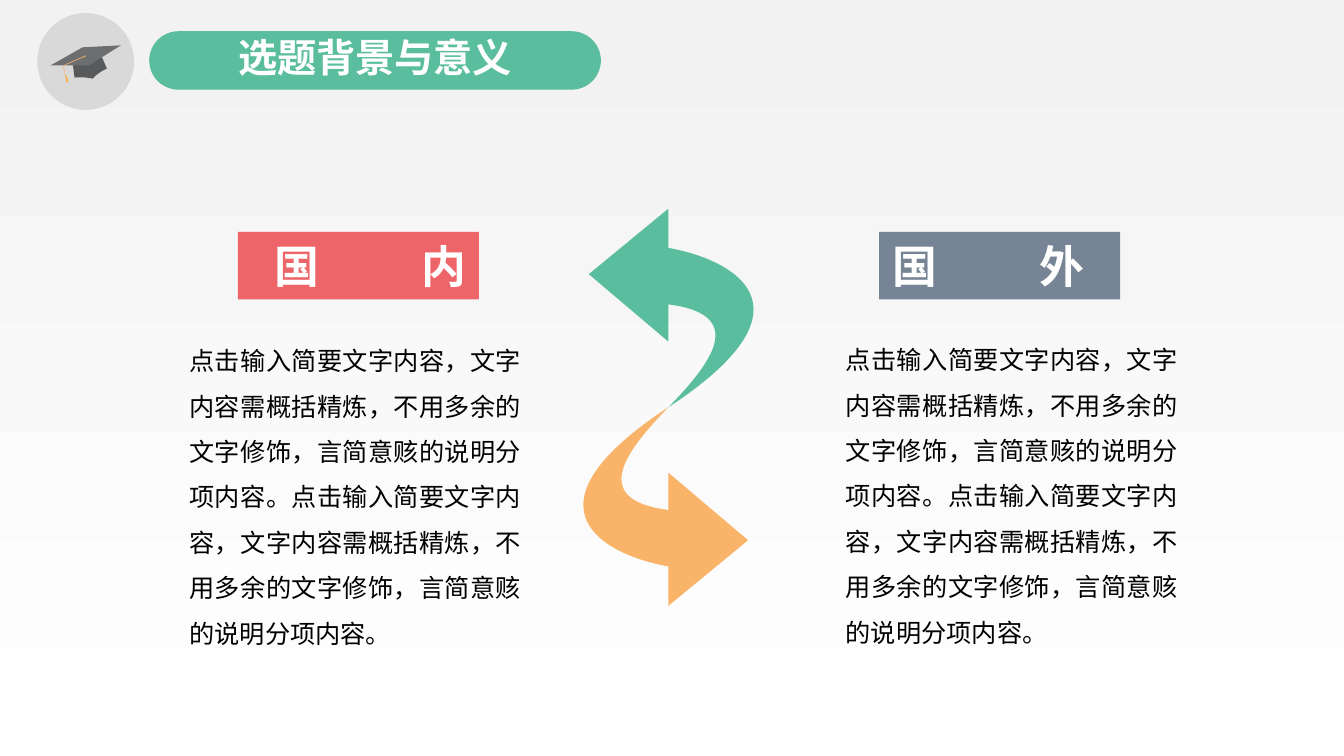
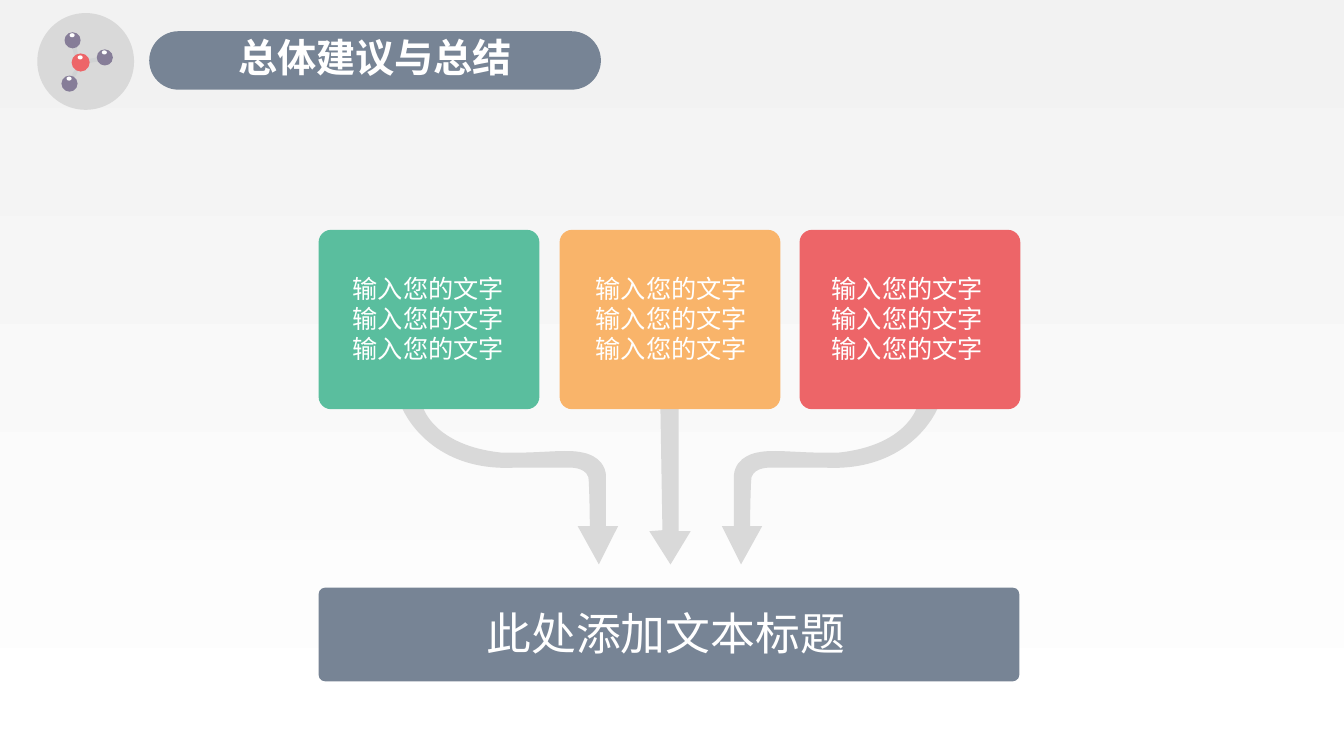
from lxml.etree import SubElement
from pptx import Presentation
from pptx.dml.color import RGBColor
from pptx.enum.shapes import MSO_SHAPE as Shape
from pptx.enum.text import MSO_ANCHOR as Anchor, PP_ALIGN as Align
from pptx.oxml.ns import qn
from pptx.util import Inches, Pt

GREEN, ORANGE, RED, SLATE = "5ABE9E", "F9B46A", "ED6568", "778495"
GREY, STICK, PURPLE, WHITE, BLACK = "D9D9D9", "D0D2D3", "867D98", "FFFFFF", "000000"
BACKGROUND = ("F2F2F2", "FFFFFF")
CJK = "Noto Sans CJK SC"

SENTENCE = "点击输入简要文字内容，文字内容需概括精炼，不用多余的文字修饰，言简意赅的说明分项内容。"
# label, fill, label left, label inset, body left, body top
REGIONS = [
    ("国\t内", RED, 2.36, 0.36, 1.78, 3.23),
    ("国\t外", SLATE, 8.72, 0.13, 8.29, 3.22),
]
CARD_LINES = ["输入您的文字"] * 3
# fill, card left, text left
CARDS = [(GREEN, 3.16, 3.4), (ORANGE, 5.55, 5.81), (RED, 7.93, 8.15)]
SUMMARY = "此处添加文本标题"

# Outlines: pairs are line ends, sextuples are Bézier curves
CURVED_ARROW = [
    (6.63, 2.46), (6.63, 2.07), (5.84, 2.72), (6.63, 3.39), (6.63, 3.02),
    (7.41, 3.12, 7.07, 3.59, 6.63, 4.04), (8.17, 3.03, 7.25, 2.57, 6.63, 2.46),
]
BENT_ARROW = [
    (3.99, 4.05), (3.99, 4.05, 4.24, 4.68, 5.1, 4.64), (5.67, 4.64),
    (5.67, 4.64, 5.85, 4.64, 5.84, 4.78), (5.85, 5, 5.85, 5.22, 5.85, 5.22),
    (5.73, 5.22), (5.94, 5.6), (6.13, 5.22), (6.01, 5.22),
    (6.01, 5.22, 6.01, 4.97, 6.01, 4.71), (5.99, 4.52, 5.78, 4.49, 5.78, 4.49),
    (5.61, 4.45, 5.37, 4.5, 4.97, 4.49), (4.31, 4.42, 4.2, 4.05, 4.2, 4.05),
]
STRAIGHT_ARROW = [
    (6.55, 4.05), (6.57, 5.26), (6.44, 5.27), (6.65, 5.6),
    (6.85, 5.27), (6.73, 5.27), (6.73, 4.05),
]
CAP = [
    ("58595B", [(1, 0.54), (0.72, 0.62), (0.74, 0.77),
                (0.74, 0.77, 0.84, 0.76, 0.92, 0.78),
                (0.97, 0.72, 1.06, 0.68, 1.06, 0.68)]),
    ("6D6E70", [(0.82, 0.47), (0.5, 0.65), (0.88, 0.65), (1.2, 0.45)]),
    (ORANGE, [(0.66, 0.77), (0.65, 0.77), (0.65, 0.75, 0.62, 0.66, 0.63, 0.65),
              (0.64, 0.64, 0.81, 0.57, 0.85, 0.55), (0.85, 0.56),
              (0.77, 0.59, 0.64, 0.65, 0.64, 0.65),
              (0.63, 0.66, 0.64, 0.72, 0.66, 0.77)]),
    ("FAAF40", [(0.65, 0.75), (0.66, 0.75), (0.68, 0.81), (0.66, 0.82)]),
]
STICKS = [
    [(1.03, 0.6), (0.86, 0.63), (0.85, 0.59), (1.03, 0.56)],
    [(0.75, 0.62), (0.71, 0.44), (0.75, 0.43), (0.79, 0.61)],
    [(0.67, 0.82), (0.76, 0.66), (0.79, 0.68), (0.7, 0.84)],
]
# colour, centre x, centre y, diameter
ATOMS = [
    (RED, 0.8, 0.62, 0.18), (PURPLE, 1.04, 0.57, 0.16),
    (PURPLE, 0.72, 0.4, 0.16), (PURPLE, 0.69, 0.83, 0.16),
]


def colour(value):
    return RGBColor.from_string(value)


def paint(shape, fill):
    shape.shadow.inherit = False
    shape.fill.solid()
    shape.fill.fore_color.rgb = colour(fill)
    shape.line.fill.background()
    return shape


def add_block(shapes, kind, left, top, width, height, fill, radius=None):
    block = shapes.add_shape(kind, Inches(left), Inches(top), Inches(width), Inches(height))
    if radius is not None:
        block.adjustments[0] = radius
    return paint(block, fill)


def add_text_box(shapes, left, top, width, height):
    return shapes.add_textbox(Inches(left), Inches(top), Inches(width), Inches(height))


def add_outline(shapes, outline, fill, place=lambda x, y: (x, y)):
    points = [pair for part in outline for pair in zip(part[::2], part[1::2])]
    placed = [tuple(Inches(v) for v in place(x, y)) for x, y in points]
    builder = shapes.build_freeform(*placed[0])
    builder.add_line_segments(placed[1:], close=True)
    shape = builder.convert_to_shape()
    lines = iter(list(shape._element.iter(qn("a:lnTo"))))
    for part in outline[1:]:
        segment = next(lines)
        if len(part) == 6:
            segment.tag = qn("a:cubicBezTo")
            for extra in (next(lines), next(lines)):
                segment.append(extra[0])
                extra.getparent().remove(extra)
    return paint(shape, fill)


def write(box, lines, size, ink, align, font=CJK, bold=False, spacing=None,
          anchor=Anchor.MIDDLE, left=0.1, right=0.1):
    frame = box.text_frame
    frame.word_wrap = True
    frame.vertical_anchor = anchor
    frame.margin_left, frame.margin_right = Inches(left), Inches(right)
    frame.text = "\n".join(lines)
    for para in frame.paragraphs:
        para.alignment = align
        if spacing:
            para.line_spacing = Pt(size * spacing)
        for span in para.runs:
            span.font.size = Pt(size)
            span.font.bold = bold
            span.font.color.rgb = colour(ink)
            span.font.name = font
            SubElement(span.font._element, qn("a:ea")).set("typeface", CJK)


def add_page(deck, title, fill):
    page = deck.slides.add_slide(deck.slide_layouts[6])
    add_block(page.shapes, Shape.OVAL, 0.37, 0.13, 0.96, 0.96, GREY)
    add_block(page.shapes, Shape.ROUNDED_RECTANGLE, 1.48, 0.31, 4.48, 0.58, fill, 0.5)
    heading = add_text_box(page.shapes, 2.26, 0.28, 2.92, 0.57)
    write(heading, [title], 28, WHITE, Align.CENTER, bold=True, spacing=1.2, left=0, right=0)
    return page


def add_background_page(deck):
    shapes = add_page(deck, "选题背景与意义", GREEN).shapes
    cap = shapes.add_group_shape().shapes
    for fill, outline in CAP:
        add_outline(cap, outline, fill)
    add_outline(shapes, CURVED_ARROW, GREEN)
    add_outline(shapes, CURVED_ARROW, ORANGE, lambda x, y: (13.26 - x, 8.08 - y))
    for label, fill, left, inset, body_left, body_top in REGIONS:
        tag = add_block(shapes, Shape.RECTANGLE, left, 2.3, 2.39, 0.67, fill)
        write(tag, [label], 32, WHITE, Align.LEFT, "Arial", True, left=inset)
        tabs = SubElement(tag.text_frame.paragraphs[0]._p.get_or_add_pPr(), qn("a:tabLst"))
        SubElement(tabs, qn("a:tab"), pos=str(Inches(1.46)), algn="l")
        body = add_text_box(shapes, body_left, body_top, 3.49, 3.28)
        write(body, [SENTENCE * 2], 18, BLACK, Align.JUSTIFY, spacing=1.8, anchor=Anchor.TOP)


def add_summary_page(deck):
    shapes = add_page(deck, "总体建议与总结", SLATE).shapes
    molecule = shapes.add_group_shape().shapes
    for stick in STICKS:
        add_outline(molecule, stick, STICK)
    for fill, x, y, size in ATOMS:
        add_block(molecule, Shape.OVAL, x - size / 2, y - size / 2, size, size, fill)
        add_block(molecule, Shape.OVAL, x - 0.03, y - 0.07, 0.05, 0.04, WHITE)
    add_outline(shapes, BENT_ARROW, GREY)
    add_outline(shapes, STRAIGHT_ARROW, GREY)
    add_outline(shapes, BENT_ARROW, GREY, lambda x, y: (13.29 - x, y))
    for fill, left, text_left in CARDS:
        add_block(shapes, Shape.ROUNDED_RECTANGLE, left, 2.28, 2.19, 1.78, fill, 0.07)
        panel = add_block(shapes, Shape.RECTANGLE, text_left, 2.66, 1.87, 1, fill)
        write(panel, CARD_LINES, 18, WHITE, Align.LEFT, spacing=1.2)
    add_block(shapes, Shape.ROUNDED_RECTANGLE, 3.16, 5.83, 6.95, 0.93, SLATE, 0.07)
    caption = add_text_box(shapes, 4.71, 5.96, 3.79, 0.64)
    write(caption, [SUMMARY], 32, WHITE, Align.CENTER, "Arial")


def main():
    deck = Presentation()
    deck.slide_width, deck.slide_height = Inches(13.33), Inches(7.5)
    backdrop = deck.slide_master.background.fill
    backdrop.gradient()
    backdrop.gradient_angle = 270
    for stop, value in zip(backdrop.gradient_stops, BACKGROUND):
        stop.color.rgb = colour(value)
    add_background_page(deck)
    add_summary_page(deck)
    deck.save("out.pptx")


if __name__ == "__main__":
    main()
